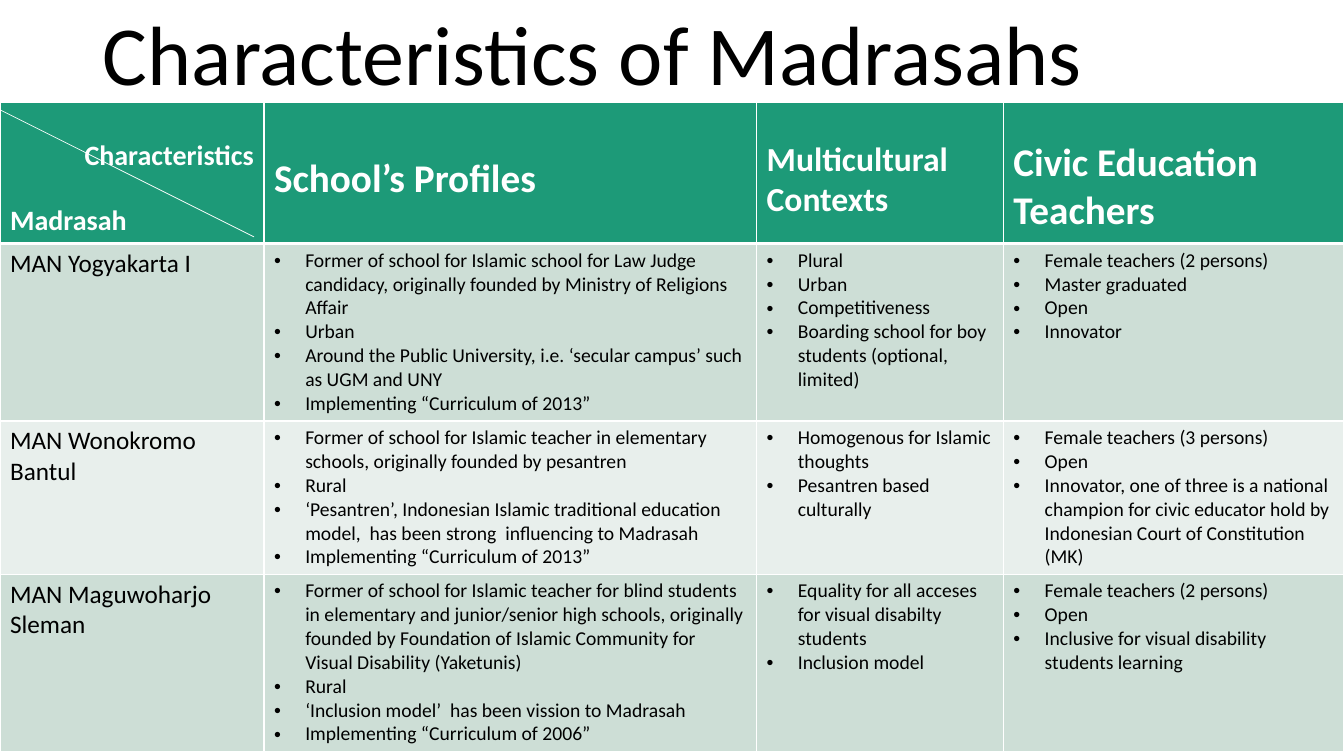
from lxml import etree
from pptx import Presentation
from pptx.dml.color import RGBColor
from pptx.enum.shapes import MSO_CONNECTOR
from pptx.enum.text import MSO_ANCHOR, MSO_AUTO_SIZE, PP_ALIGN
from pptx.oxml.ns import qn
from pptx.util import Inches, Pt

LEFT, RIGHT = PP_ALIGN.LEFT, PP_ALIGN.RIGHT
MIDDLE = MSO_ANCHOR.MIDDLE
FIXED = MSO_AUTO_SIZE.NONE
STRAIGHT = MSO_CONNECTOR.STRAIGHT

WIDE, HIGH = 13.33, 7.5
FACE = "Calibri"
WHITE, BLACK, GREEN = "FFFFFF", "000000", "1D9A78"
BANDS = ["CDDED6", "E8EFEC"]
COLS = [2.62, 4.89, 2.45, 3.38]
ROWS = [1.38, 1.76, 1.52, 1.76]
INDENT = 0.31

HEADS = [("School’s Profiles", 28, 0.52),
         ("Multicultural Contexts", 24, 0.36),
         ("Civic Education Teachers", 28, 0.36)]

SCHOOLS = [
    ("MAN Yogyakarta I",
     ["Former of school for Islamic school for Law Judge candidacy, "
      "originally founded by Ministry of Religions Affair",
      "Urban",
      "Around the Public University, i.e. ‘secular campus’ such as UGM and UNY",
      "Implementing “Curriculum of 2013”"],
     ["Plural", "Urban", "Competitiveness",
      "Boarding school for boy students (optional, limited)"],
     ["Female teachers (2 persons)", "Master graduated", "Open", "Innovator"]),
    ("MAN Wonokromo Bantul",
     ["Former of school for Islamic teacher in elementary schools, "
      "originally founded by pesantren",
      "Rural",
      "‘Pesantren’, Indonesian Islamic traditional education model,  "
      "has been strong  influencing to Madrasah",
      "Implementing “Curriculum of 2013”"],
     ["Homogenous for Islamic thoughts", "Pesantren based culturally"],
     ["Female teachers (3 persons)", "Open",
      "Innovator, one of three is a national champion for civic educator "
      "hold by Indonesian Court of Constitution (MK)"]),
    ("MAN Maguwoharjo Sleman",
     ["Former of school for Islamic teacher for blind students in elementary "
      "and junior/senior high schools, originally founded by Foundation of "
      "Islamic Community for Visual Disability (Yaketunis)",
      "Rural",
      "‘Inclusion model’  has been vission to Madrasah",
      "Implementing “Curriculum of 2006”"],
     ["Equality for all acceses for visual disabilty students",
      "Inclusion model"],
     ["Female teachers (2 persons)", "Open",
      "Inclusive for visual disability students learning"]),
]


def color(code):
    return RGBColor.from_string(code)


def style(para, size, code, bold=False):
    font = para.font
    font.name, font.size, font.bold = FACE, Pt(size), bold
    font.color.rgb = color(code)


def bullet(para):
    props = para._p.get_or_add_pPr()
    props.set("marL", str(Inches(INDENT)))
    props.set("indent", str(-Inches(INDENT)))
    etree.SubElement(props, qn("a:buFont"), typeface="Arial")
    etree.SubElement(props, qn("a:buChar"), char="•")


def paint(cell, code, top, base):
    props = cell._tc.get_or_add_tcPr()
    for side, width in (("L", 1), ("R", 1), ("T", top), ("B", base)):
        line = etree.SubElement(props, qn("a:ln" + side), w=str(Pt(width)))
        fill = etree.SubElement(line, qn("a:solidFill"))
        etree.SubElement(fill, qn("a:srgbClr"), val=WHITE)
    cell.fill.solid()
    cell.fill.fore_color.rgb = color(code)


def write(cell, lines, size, code, bold=False, marks=False):
    frame = cell.text_frame
    frame.text = "\n".join(lines)
    for para in frame.paragraphs:
        if marks:
            bullet(para)
        style(para, size, code, bold)


def add_title(slide, box):
    title = slide.shapes.title
    title.left, title.top, title.width, title.height = map(Inches, box)
    frame = title.text_frame
    frame.text = "Characteristics of Madrasahs"
    frame.auto_size = FIXED
    frame.word_wrap = True
    frame.vertical_anchor = MIDDLE
    para = frame.paragraphs[0]
    para.alignment = LEFT
    para.line_spacing = 0.9
    style(para, 60, BLACK)


def fill_head(grid):
    for cell in grid.rows[0].cells:
        paint(cell, GREEN, 1, 3)
    first = grid.cell(0, 0)
    first.margin_top = Inches(0.36)
    write(first, ["Characteristics", "Madrasah"], 20, WHITE, True)
    upper, lower = first.text_frame.paragraphs
    upper.alignment = RIGHT
    lower.space_before = Pt(22)
    for col, (text, size, top) in enumerate(HEADS, 1):
        cell = grid.cell(0, col)
        cell.margin_top = Inches(top)
        write(cell, [text], size, WHITE, True)


def fill_body(grid):
    for row, (name, *lists) in enumerate(SCHOOLS, 1):
        for cell in grid.rows[row].cells:
            paint(cell, BANDS[(row - 1) % 2], 3 if row == 1 else 1, 1)
        write(grid.cell(row, 0), [name], 18, BLACK)
        for col, lines in enumerate(lists, 1):
            write(grid.cell(row, col), lines, 14, BLACK, marks=True)


def add_grid(slide, box):
    left, top, width, height = box
    shape = slide.shapes.add_table(len(ROWS), len(COLS), *map(Inches, box))
    grid = shape.table
    for col, share in zip(grid.columns, COLS):
        col.width = Inches(width * share / sum(COLS))
    for row, share in zip(grid.rows, ROWS):
        row.height = Inches(height * share / sum(ROWS))
    fill_head(grid)
    fill_body(grid)

    ends = (left, top + 0.07, left + COLS[0] - 0.1, top + 1.33)
    line = slide.shapes.add_connector(STRAIGHT, *map(Inches, ends))
    line.line.color.rgb = color(WHITE)
    line.line.width = Pt(0.5)
    etree.SubElement(line._element.spPr, qn("a:effectLst"))


def main():
    deck = Presentation()
    deck.slide_width, deck.slide_height = Inches(WIDE), Inches(HIGH)
    slide = deck.slides.add_slide(deck.slide_layouts[5])
    add_title(slide, (0.92, -0.01, 11.5, 1.18))
    add_grid(slide, (0, 1.02, WIDE, sum(ROWS)))
    deck.save("out.pptx")


if __name__ == "__main__":
    main()
